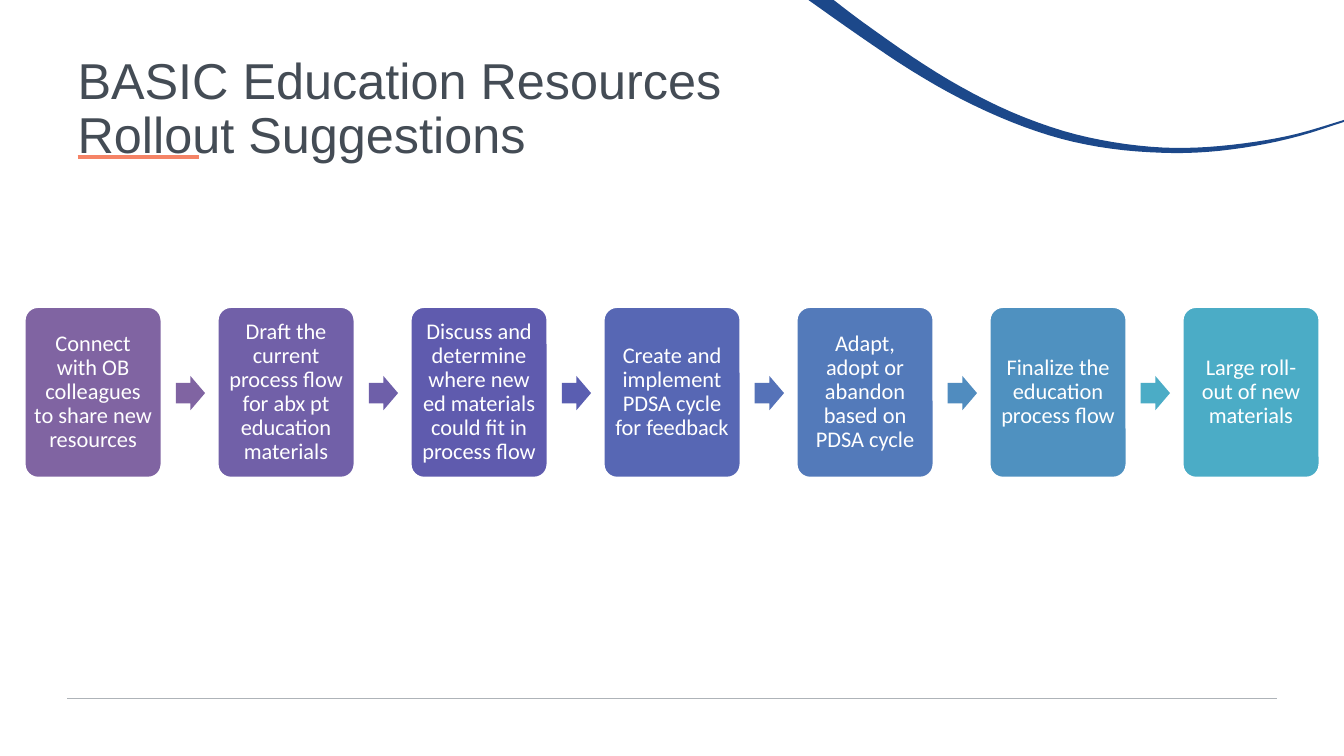
from dataclasses import dataclass

from lxml import etree
from pptx import Presentation
from pptx.dml.color import RGBColor
from pptx.enum.shapes import MSO_CONNECTOR, MSO_SHAPE
from pptx.enum.text import MSO_ANCHOR, PP_ALIGN
from pptx.oxml.ns import qn
from pptx.util import Inches, Pt

ROUND = MSO_SHAPE.ROUNDED_RECTANGLE
ARROW = MSO_SHAPE.RIGHT_ARROW
LINE = MSO_CONNECTOR.STRAIGHT
MIDDLE = MSO_ANCHOR.MIDDLE
CENTER = PP_ALIGN.CENTER

WIDE, HIGH = Inches(13.333), Inches(7.5)
LEFT, PITCH = 1.8, 14.36
WHITE = "FFFFFF"


@dataclass
class Step:
    """One step of the rollout, with its fill and that of the arrow after it."""
    text: str
    fill: str
    arrow: str = ""


@dataclass
class Rule:
    """A level line, placed in percent of the slide."""
    left: float
    top: float
    width: float
    hue: str
    weight: float


STEPS = [
    Step("Connect with OB colleagues to share new resources", "8064A2", "8064A2"),
    Step("Draft the current process flow for abx pt education materials", "7160A8", "6E5FA9"),
    Step("Discuss and determine where new ed materials could fit in process flow",
         "5F5BAE", "5A5EB1"),
    Step("Create and implement PDSA cycle for feedback", "5767B4", "5572B8"),
    Step("Adapt, adopt or abandon based on PDSA cycle", "537ABA", "508CBF"),
    Step("Finalize the education process flow", "4F91C0", "4BACC6"),
    Step("Large roll-out of new materials", "4BACC6"),
]
RULES = [Rule(5, 92.4, 90, "AEB3B8", 0.48), Rule(5.78, 20.78, 9, "F58366", 2.52)]
LOWER = [(60.15, 0), (63.98, 4.8), (67.8, 9.33), (71.48, 13.07), (75.3, 16.17),
         (78.98, 18.37), (82.65, 19.67), (86.48, 20.22), (89.85, 20.1),
         (93.38, 19.3), (96.68, 18), (100, 16.13)]
UPPER = [(100, 15.87), (96.6, 17.67), (93.45, 18.75), (89.85, 19.45), (86.48, 19.52),
         (82.8, 18.8), (79.13, 17.33), (75.23, 14.8), (71.48, 11.47), (67.95, 7.6),
         (64.2, 2.93), (62.03, 0)]


def across(share: float) -> int:
    """Turn a percent of the slide's width into a length."""
    return round(WIDE * share / 100)


def down(share: float) -> int:
    """Turn a percent of the slide's height into a length."""
    return round(HIGH * share / 100)


def place(left: float, top: float, width: float, height: float) -> tuple:
    """Turn percents into a left, top, width and height."""
    return across(left), down(top), across(width), down(height)


def color(code: str) -> RGBColor:
    """Make a colour from a hex string."""
    return RGBColor.from_string(code)


def paint(shape, fill: str) -> None:
    """Give a shape a plain fill with no line or shadow."""
    shape.shadow.inherit = False
    shape.fill.solid()
    shape.fill.fore_color.rgb = color(fill)
    shape.line.fill.background()


def style(para, font: str, size: float, hue: str) -> None:
    """Set the type and line spacing of a paragraph."""
    para.line_spacing = 0.9
    para.font.name = font
    para.font.size = Pt(size)
    para.font.color.rgb = color(hue)


def smooth(edge: list) -> list:
    """Round off an edge with a Catmull-Rom curve."""
    ends = [edge[0], *edge, edge[-1]]
    curve = []
    for a, b, c, d in zip(ends, ends[1:], ends[2:], ends[3:]):
        for t in (0, 0.25, 0.5, 0.75):
            curve.append(tuple(
                q + t * (r - p) / 2 + t**2 * (2 * p - 5 * q + 4 * r - s) / 2
                + t**3 * (3 * q - p - 3 * r + s) / 2
                for p, q, r, s in zip(a, b, c, d)))
    return curve + [edge[-1]]


def draw_swoosh(slide) -> None:
    """Draw the blue sweep in the top right corner."""
    spots = [(across(x), down(y)) for x, y in smooth(LOWER) + smooth(UPPER)]
    form = slide.shapes.build_freeform(*spots[0])
    form.add_line_segments(spots[1:], close=True)
    paint(form.convert_to_shape(), "1C488A")


def draw_rule(slide, rule: Rule) -> None:
    """Draw a level line."""
    top = down(rule.top)
    line = slide.shapes.add_connector(
        LINE, across(rule.left), top, across(rule.left + rule.width), top)
    line.line.color.rgb = color(rule.hue)
    line.line.width = Pt(rule.weight)
    etree.SubElement(line._element.spPr, qn("a:effectLst"))


def draw_title(slide) -> None:
    """Write the two-line title."""
    frame = slide.shapes.add_textbox(*place(5.03, 4.93, 90, 19.33)).text_frame
    frame.word_wrap = True
    frame.vertical_anchor = MIDDLE
    frame.text = "BASIC Education Resources\nRollout Suggestions"
    for para in frame.paragraphs:
        style(para, "Arial", 36, "444C55")


def draw_step(slide, step: Step, left: float) -> None:
    """Draw a step's box and the arrow to the next one."""
    box = slide.shapes.add_shape(ROUND, *place(left, 40.55, 10.25, 22.7))
    box.adjustments[0] = 0.1
    paint(box, step.fill)
    box.line.color.rgb = color(WHITE)
    box.line.width = Pt(2)
    frame = box.text_frame
    frame.word_wrap = True
    frame.vertical_anchor = MIDDLE
    frame.margin_left = frame.margin_right = Inches(0.06)
    frame.margin_top = frame.margin_bottom = Inches(0.06)
    frame.text = step.text
    para = frame.paragraphs[0]
    para.alignment = CENTER
    style(para, "Calibri", 16, WHITE)
    if step.arrow:
        arrow = slide.shapes.add_shape(ARROW, *place(left + 11.28, 49.73, 2.18, 4.53))
        arrow.adjustments[0] = 0.6
        arrow.adjustments[1] = 0.5
        paint(arrow, step.arrow)


def main() -> None:
    """Build the slide and save it."""
    deck = Presentation()
    deck.slide_width, deck.slide_height = WIDE, HIGH
    slide = deck.slides.add_slide(deck.slide_layouts[6])
    draw_swoosh(slide)
    for rule in RULES:
        draw_rule(slide, rule)
    draw_title(slide)
    for i, step in enumerate(STEPS):
        draw_step(slide, step, LEFT + i * PITCH)
    deck.save("out.pptx")


if __name__ == "__main__":
    main()
